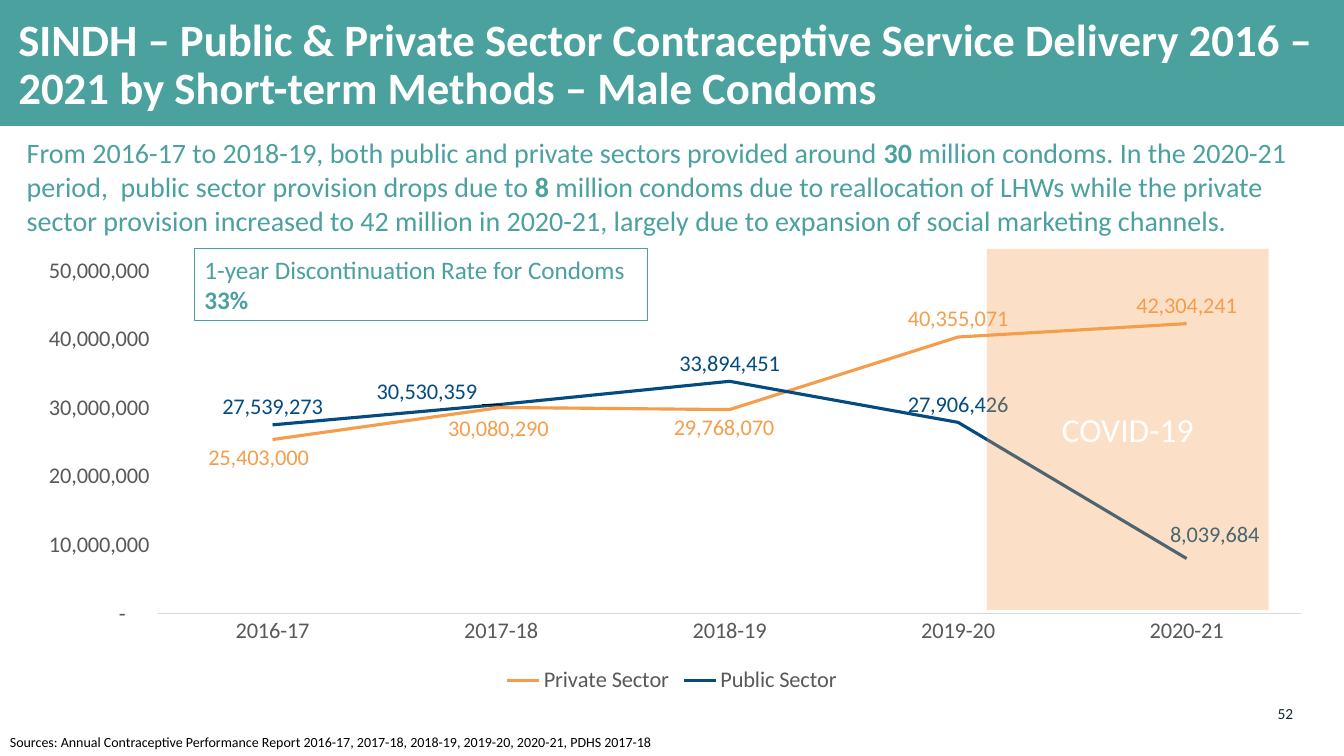
from lxml import etree
from pptx import Presentation
from pptx.chart.data import CategoryChartData
from pptx.dml.color import RGBColor
from pptx.enum.chart import XL_CHART_TYPE, XL_LABEL_POSITION, XL_LEGEND_POSITION, XL_TICK_MARK
from pptx.enum.shapes import MSO_SHAPE
from pptx.enum.text import MSO_ANCHOR, PP_ALIGN
from pptx.oxml import parse_xml
from pptx.oxml.ns import nsdecls, qn
from pptx.util import Pt

COLORS = {"teal": "4AA19E", "white": "FFFFFF", "ink": "112E38", "black": "000000",
          "orange": "F49E4C", "navy": "044B7F", "grey": "595959", "rule": "D9D9D9"}
COLORS = {name: RGBColor.from_string(value) for name, value in COLORS.items()}
FONT = "Calibri"
NUMBER_FORMAT = r'_(* #,##0_);_(* \(#,##0\);_(* "-"??_);_(@_)'

presentation = Presentation()
presentation.slide_width, presentation.slide_height = Pt(960), Pt(540)
slide = presentation.slides.add_slide(presentation.slide_layouts[6])


def add_block(box, paragraphs=(), size=18, color="teal", bold=False, fill=None, line=None,
              align=PP_ALIGN.LEFT, anchor=MSO_ANCHOR.TOP, inset=None, spacing=None):
    """Add a rectangle; each paragraph is a list of runs, odd runs swapping the weight."""
    block = slide.shapes.add_shape(MSO_SHAPE.RECTANGLE, *[Pt(length) for length in box])
    block.shadow.inherit = False
    if fill:
        block.fill.solid()
        block.fill.fore_color.rgb = COLORS[fill]
    else:
        block.fill.background()
    if line:
        block.line.color.rgb = COLORS[line]
        block.line.width = Pt(0.75)
    else:
        block.line.fill.background()
    frame = block.text_frame
    frame.word_wrap = True
    frame.vertical_anchor = anchor
    if inset is not None:
        frame.margin_left = frame.margin_right = frame.margin_top = frame.margin_bottom = Pt(inset)
    for index, runs in enumerate(paragraphs):
        paragraph = frame.add_paragraph() if index else frame.paragraphs[0]
        paragraph.alignment = align
        paragraph.line_spacing = spacing
        for position, text in enumerate(runs):
            run = paragraph.add_run()
            run.text = text
            run.font.name, run.font.size = FONT, Pt(size)
            run.font.bold = bold != (position % 2 == 1)
            run.font.color.rgb = COLORS[color]
    return block


def style_font(font, color):
    font.name, font.size, font.bold = FONT, Pt(16), False
    font.color.rgb = COLORS[color]


# Title band
add_block((0, 0, 960, 90), fill="teal")
add_block((6, 17, 954, 60.5),
          [["SINDH – Public & Private Sector Contraceptive Service Delivery 2016 – 2021 "
            "by Short-term Methods – Male Condoms"]],
          size=32, color="white", bold=True, anchor=MSO_ANCHOR.MIDDLE, spacing=0.9)

# Page number and sources
add_block((888.5, 503.3, 35.3, 14.4), [["52"]], size=11, color="ink",
          align=PP_ALIGN.RIGHT, inset=0)
add_block((0, 520.6, 684, 19.4),
          [["Sources: Annual Contraceptive Performance Report 2016-17, 2017-18, 2018-19, "
            "2019-20, 2020-21, PDHS 2017-18"]], size=10, color="black")

# Summary and discontinuation rate
add_block((12, 93.6, 936, 80),
          [["From 2016-17 to 2018-19, both public and private sectors provided around ", "30",
            " million condoms. In the 2020-21 period,  public sector provision drops due to ", "8",
            " million condoms due to reallocation of LHWs while the private sector provision "
            "increased to 42 million in 2020-21, largely due to expansion of social marketing "
            "channels."]], size=20, fill="white")
add_block((139, 177.8, 323.5, 51), [["1-year Discontinuation Rate for Condoms"], ["", "33%"]],
          line="teal")

# Line chart: values, colour and label shifts (in points) for each sector
CHART_WIDTH, CHART_HEIGHT = 936, 321
sectors = {
    "Private Sector": ("orange", (25403000, 30080290, 29768070, 40355071, 42304241),
                       {0: (-10, 26), 1: (-2, 28), 2: (-4, 26)}),
    "Public Sector": ("navy", (27539273, 30530359, 33894451, 27906426, 8039684),
                      {1: (-53, 4), 4: (20, -4)}),
}
deliveries = CategoryChartData(number_format=NUMBER_FORMAT)
deliveries.categories = ["2016-17", "2017-18", "2018-19", "2019-20", "2020-21"]
for sector, (color, values, shifts) in sectors.items():
    deliveries.add_series(sector, values)
chart = slide.shapes.add_chart(XL_CHART_TYPE.LINE, Pt(12), Pt(177.8), Pt(CHART_WIDTH),
                               Pt(CHART_HEIGHT), deliveries).chart
chart.has_title = False
style_font(chart.font, "grey")
chart.has_legend = True
chart.legend.position = XL_LEGEND_POSITION.BOTTOM
chart.legend.include_in_layout = False
style_font(chart.legend.font, "grey")
chart.plots[0].vary_by_categories = False

# Axes
years, condoms = chart.category_axis, chart.value_axis
for axis in (years, condoms):
    axis.has_major_gridlines = False
    axis.major_tick_mark = axis.minor_tick_mark = XL_TICK_MARK.NONE
    style_font(axis.tick_labels.font, "grey")
years.format.line.color.rgb = COLORS["rule"]
years.format.line.width = Pt(0.75)
condoms.format.line.fill.background()
condoms.minimum_scale, condoms.maximum_scale, condoms.major_unit = 0, 50000000, 10000000
condoms.tick_labels.number_format = NUMBER_FORMAT
condoms.tick_labels.number_format_is_linked = False

# Plot area placed within the chart
plot_area = chart.plots[0]._element.getparent()
for layout in plot_area.findall(qn("c:layout")):
    plot_area.remove(layout)
plot_area.insert(0, parse_xml(
    f'<c:layout {nsdecls("c")}><c:manualLayout><c:layoutTarget val="inner"/>'
    '<c:xMode val="edge"/><c:yMode val="edge"/><c:x val="0.108"/><c:y val="0.049"/>'
    '<c:w val="0.872"/><c:h val="0.763"/></c:manualLayout></c:layout>'))

# Series lines and labels
for series, (color, values, shifts) in zip(chart.plots[0].series, sectors.values()):
    series.smooth = False
    series.format.line.color.rgb = COLORS[color]
    series.format.line.width = Pt(2.25)
    labels = series.data_labels
    labels.show_value = True
    labels.position = XL_LABEL_POSITION.ABOVE
    labels.number_format, labels.number_format_is_linked = NUMBER_FORMAT, False
    style_font(labels.font, color)
    for point, (dx, dy) in shifts.items():
        label = series.points[point].data_label
        style_font(label.font, color)
        label.position = XL_LABEL_POSITION.ABOVE
        index = series._element.xpath(f'c:dLbls/c:dLbl/c:idx[@val="{point}"]')[0]
        index.addnext(parse_xml(
            f'<c:layout {nsdecls("c")}><c:manualLayout><c:x val="{dx / CHART_WIDTH:.4f}"/>'
            f'<c:y val="{dy / CHART_HEIGHT:.4f}"/></c:manualLayout></c:layout>'))

# COVID-19 period
covid = add_block((704.9, 177.8, 201.3, 257.8), [["COVID-19"]], size=24, color="white",
                  fill="orange", align=PP_ALIGN.CENTER, anchor=MSO_ANCHOR.MIDDLE)
covid_color = covid._element.spPr.find(qn("a:solidFill"))[0]
etree.SubElement(covid_color, qn("a:alpha"), val="31000")

presentation.save("out.pptx")
